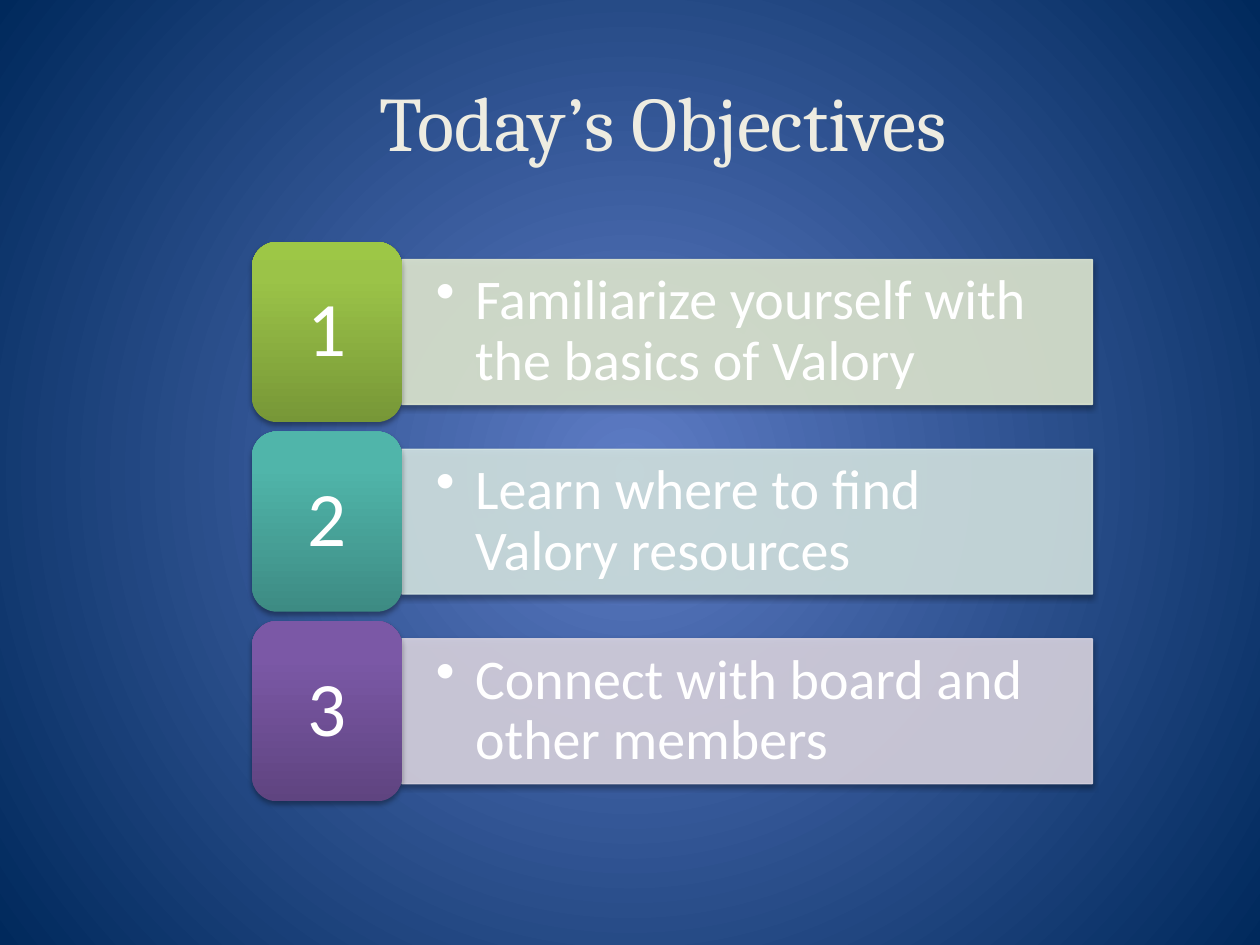
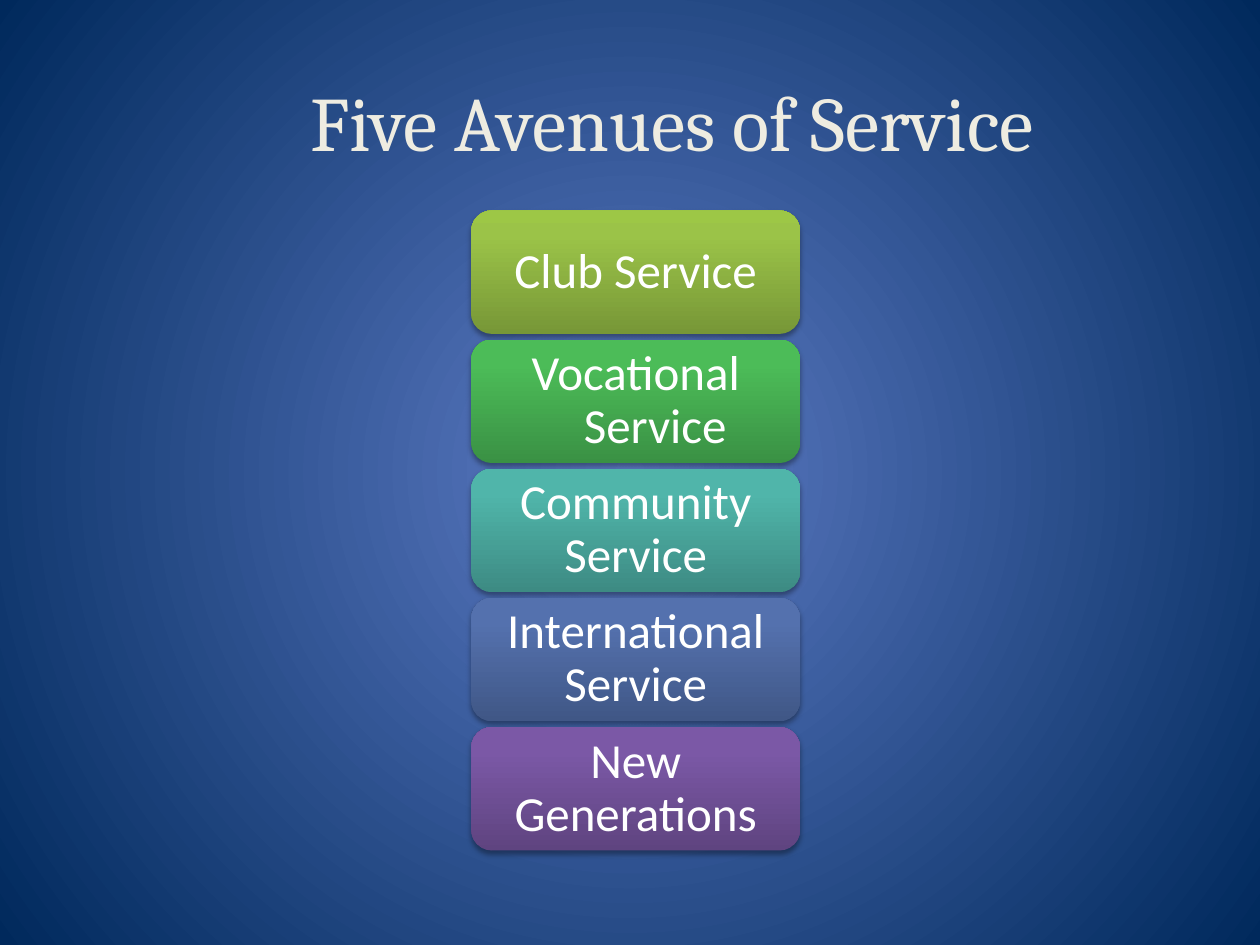
from lxml import etree
from pptx import Presentation
from pptx.dml.color import RGBColor
from pptx.enum.shapes import MSO_SHAPE as SHAPE
from pptx.enum.text import MSO_ANCHOR as ANCHOR, MSO_AUTO_SIZE as AUTO, PP_ALIGN as ALIGN
from pptx.oxml import parse_xml
from pptx.oxml.ns import nsdecls, qn
from pptx.util import Inches, Pt

WHITE = RGBColor(0xFF, 0xFF, 0xFF)
CREAM = RGBColor(0xEE, 0xEC, 0xE1)
GLOW = RGBColor(0x5E, 0x7C, 0xC5)
NAVY = RGBColor(0x00, 0x29, 0x5C)
LIME = [RGBColor(0x77, 0x97, 0x37), RGBColor(0x9B, 0xC3, 0x48), RGBColor(0x9D, 0xC7, 0x46)]
GREEN = [RGBColor(0x3A, 0x91, 0x44), RGBColor(0x4C, 0xBC, 0x58), RGBColor(0x4A, 0xBF, 0x57)]
TEAL = [RGBColor(0x3D, 0x8B, 0x83), RGBColor(0x50, 0xB5, 0xAA), RGBColor(0x4E, 0xB8, 0xAC)]
BLUE = [RGBColor(0x40, 0x57, 0x86), RGBColor(0x54, 0x71, 0xAE), RGBColor(0x52, 0x71, 0xB0)]
PURPLE = [RGBColor(0x5F, 0x44, 0x80), RGBColor(0x7B, 0x58, 0xA6), RGBColor(0x7C, 0x57, 0xA8)]
PALE_LIME = RGBColor(0xDE, 0xE7, 0xD1)
PALE_TEAL = RGBColor(0xD2, 0xE3, 0xE2)
PALE_PURPLE = RGBColor(0xD8, 0xD3, 0xE0)

UPWARD = '<a:lin ang="16200000" scaled="0"/>'
RADIAL = ('<a:path path="circle"><a:fillToRect l="50000" t="50000" '
          'r="50000" b="50000"/></a:path>')


def write(tf, text, size, font="Calibri", color=WHITE, inset=(0.1, 0.05),
          align=ALIGN.CENTER, spacing=0.9, indent=0, bullet=False):
    tf.word_wrap = True
    tf.auto_size = AUTO.NONE
    tf.vertical_anchor = ANCHOR.MIDDLE
    tf.margin_left = tf.margin_right = Inches(inset[0])
    tf.margin_top = tf.margin_bottom = Inches(inset[1])
    p = tf.paragraphs[0]
    p.alignment = align
    p.line_spacing = spacing
    pPr = p._p.get_or_add_pPr()
    if indent:
        pPr.set("marL", str(Inches(indent)))
        pPr.set("indent", str(-Inches(indent)))
    if bullet:
        etree.SubElement(pPr, qn("a:buChar")).set("char", "•")
    r = p.add_run()
    r.text = text
    r.font.size = Pt(size)
    r.font.name = font
    r.font.color.rgb = color


def set_gradient(fill, parent, stops, direction):
    fill.solid()
    gs = "".join(f'<a:gs pos="{pos * 1000}"><a:srgbClr val="{c}"/></a:gs>' for pos, c in stops)
    xml = (f'<a:gradFill {nsdecls("a")} rotWithShape="1"><a:gsLst>{gs}</a:gsLst>'
           f'{direction}</a:gradFill>')
    parent.replace(parent.find(qn("a:solidFill")), parse_xml(xml))


prs = Presentation()
prs.slide_width = Inches(10)
prs.slide_height = Inches(7.5)
master = prs.slide_master
fill = master.background.fill
fill.solid()
set_gradient(fill, master.element.find(".//" + qn("p:bgPr")), [(0, GLOW), (100, NAVY)], RADIAL)

slides = []
for title in ["Today’s Objectives ", "Five Avenues of Service"]:
    s = prs.slides.add_slide(prs.slide_layouts[5])
    sp = s.shapes.title
    sp.left, sp.top, sp.width, sp.height = [Inches(v) for v in (0.92, 0.33, 8.83, 1.25)]
    write(sp.text_frame, title, 44, font="Cambria", color=CREAM, spacing=1.0)
    slides.append(s)
objectives, avenues = slides

goals = [
    ("Familiarize yourself with the basics of Valory", LIME, PALE_LIME),
    ("Learn where to find Valory resources", TEAL, PALE_TEAL),
    ("Connect with board and other members", PURPLE, PALE_PURPLE),
]
services = [
    ("Club Service", LIME, 0),
    ("Vocational Service", GREEN, 0.31),
    ("Community Service", TEAL, 0),
    ("International Service", BLUE, 0),
    ("New Generations", PURPLE, 0),
]

bar_format = dict(size=32, inset=(0.27, 0.14), align=ALIGN.LEFT, indent=0.31, bullet=True)
number_format = dict(size=44, inset=(0.18, 0.09))
boxes = []
for i, (goal, shades, pale) in enumerate(goals):
    top = 1.92 + i * 1.505
    boxes.append((objectives, SHAPE.RECTANGLE, (3.19, top + 0.14, 5.48, 1.15),
                  goal, pale, bar_format))
    boxes.append((objectives, SHAPE.ROUNDED_RECTANGLE, (2, top, 1.19, 1.43),
                  str(i + 1), shades, number_format))
for i, (service, shades, indent) in enumerate(services):
    boxes.append((avenues, SHAPE.ROUNDED_RECTANGLE, (3.74, 1.67 + i * 1.025, 2.61, 0.98),
                  service, shades, dict(size=28, inset=(0.12, 0.06), indent=indent)))

for s, kind, area, text, color, text_format in boxes:
    sp = s.shapes.add_shape(kind, *[Inches(v) for v in area])
    spPr = sp._element.spPr
    if kind == SHAPE.RECTANGLE:
        sp.fill.solid()
        sp.fill.fore_color.rgb = color
        sp.line.color.rgb = color
        sp.line.width = Pt(0.75)
        for clr in spPr.iter(qn("a:srgbClr")):
            etree.SubElement(clr, qn("a:alpha")).set("val", "90000")
    else:
        set_gradient(sp.fill, spPr, zip((0, 80, 100), color), UPWARD)
        sp.line.fill.background()
    sp.shadow.inherit = False
    spPr.find(qn("a:effectLst")).append(parse_xml(
        f'<a:outerShdw {nsdecls("a")} blurRad="{Pt(3.1)}" dist="{Pt(1.8)}" dir="5400000" '
        'rotWithShape="0"><a:srgbClr val="000000"><a:alpha val="35000"/></a:srgbClr>'
        '</a:outerShdw>'))
    write(sp.text_frame, text, **text_format)

prs.save("out.pptx")
